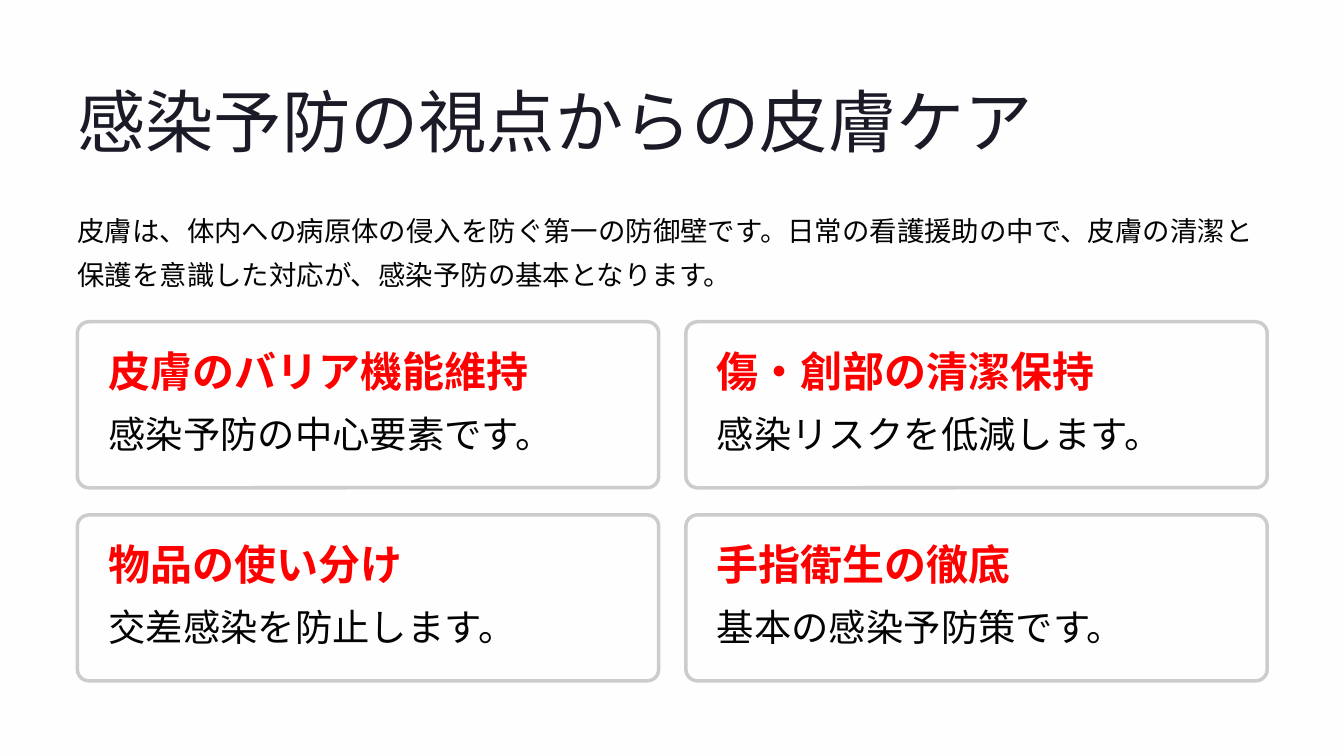
import dataclasses

import lxml.etree
import pptx
import pptx.dml.color
import pptx.enum.shapes
import pptx.enum.text
import pptx.oxml.ns
import pptx.util

Cm = pptx.util.Cm
Pt = pptx.util.Pt
rgb = pptx.dml.color.RGBColor.from_string


@dataclasses.dataclass(frozen=True)
class Theme:
    backdrop: str = "FEFEFE"
    card_fill: str = "FFFFFF"
    card_opacity: int = 95
    card_border: str = "CCCCCC"
    border_width: float = 3
    # Each text style: font, size, colour, bold, line spacing
    title: tuple = ("Inter", 58.5, "1B1B27", False, 73.5)
    intro: tuple = ("Lato", 23.5, "030303", False, 37.5)
    heading: tuple = ("Inter", 36, "FF0000", True, 36.5)
    body: tuple = ("Lato", 32, "030303", False, 37.5)


class SlideBuilder:
    def __init__(self, slide, theme):
        self.slide = slide
        self.theme = theme

    def background(self):
        fill = self.slide.background.fill
        fill.solid()
        fill.fore_color.rgb = rgb(self.theme.backdrop)

    def text(self, wording, style, left, top, width, height, wrap=False):
        box = self.slide.shapes.add_textbox(Cm(left), Cm(top), Cm(width), Cm(height))
        frame = box.text_frame
        frame_format = {
            "margin_left": 0, "margin_top": 0, "margin_right": 0, "margin_bottom": 0,
            "word_wrap": wrap, "vertical_anchor": pptx.enum.text.MSO_ANCHOR.TOP,
        }
        for name, value in frame_format.items():
            setattr(frame, name, value)

        font_name, size, color, bold, spacing = style
        paragraph = frame.paragraphs[0]
        paragraph.line_spacing = Pt(spacing)
        run = paragraph.add_run()
        run.text = wording
        for name, value in {"name": font_name, "size": Pt(size), "bold": bold}.items():
            setattr(run.font, name, value)
        run.font.color.rgb = rgb(color)

    def panel(self, left, top, width, height):
        """Draw the rounded, slightly translucent frame of a card."""
        panel = self.slide.shapes.add_shape(
            pptx.enum.shapes.MSO_SHAPE.ROUNDED_RECTANGLE,
            Cm(left), Cm(top), Cm(width), Cm(height))
        panel.adjustments[0] = 0.07
        panel.shadow.inherit = False
        panel.fill.solid()
        panel.fill.fore_color.rgb = rgb(self.theme.card_fill)
        color = panel.fill._xPr.find(".//" + pptx.oxml.ns.qn("a:srgbClr"))
        lxml.etree.SubElement(color, pptx.oxml.ns.qn("a:alpha"),
                              val=str(self.theme.card_opacity * 1000))
        panel.line.color.rgb = rgb(self.theme.card_border)
        panel.line.width = Pt(self.theme.border_width)

    def card(self, heading, body, left, top, width, height):
        padding = 0.94
        text_left, text_width = left + padding, width - 2 * padding
        self.panel(left, top, width, height)
        self.text(heading, self.theme.heading, text_left, top + padding, text_width, 1.3)
        self.text(body, self.theme.body, text_left, top + 2.74, text_width, 1.32)


CARDS = [
    ("皮膚のバリア機能維持", "感染予防の中心要素です。"),
    ("傷・創部の清潔保持", "感染リスクを低減します。"),
    ("物品の使い分け", "交差感染を防止します。"),
    ("手指衛生の徹底", "基本の感染予防策です。"),
]
INTRO = ("皮膚は、体内への病原体の侵入を防ぐ第一の防御壁です。日常の看護援助の中で、"
         "皮膚の清潔と保護を意識した対応が、感染予防の基本となります。")


def main():
    presentation = pptx.Presentation()
    presentation.slide_width = Cm(40.64)
    presentation.slide_height = Cm(22.86)
    theme = Theme()
    builder = SlideBuilder(
        presentation.slides.add_slide(presentation.slide_layouts[6]), theme)

    margin, cards_top = 2.34, 9.73
    card_width, card_height, gap = 17.58, 5.02, 0.82
    builder.background()
    builder.text("感染予防の視点からの皮膚ケア", theme.title, margin, 2.29, 29.13, 2.59)
    builder.text(INTRO, theme.intro, margin, 6.15, 35.99, 2.67, wrap=True)
    for index, (heading, body) in enumerate(CARDS):
        row, column = divmod(index, 2)
        builder.card(heading, body,
                     margin + column * (card_width + gap),
                     cards_top + row * (card_height + gap),
                     card_width, card_height)

    presentation.save("out.pptx")


if __name__ == "__main__":
    main()
